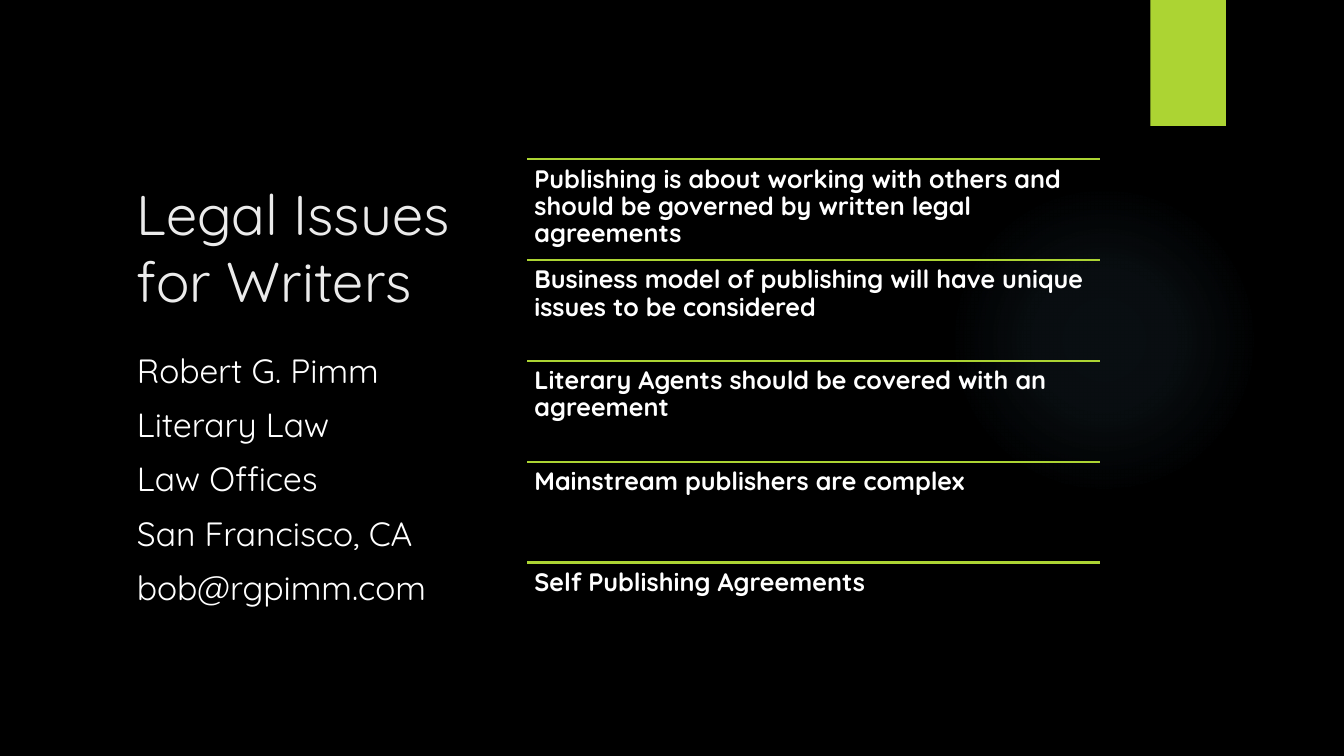
from lxml import etree
from pptx import Presentation
from pptx.dml.color import RGBColor
from pptx.enum.shapes import MSO_CONNECTOR, MSO_SHAPE
from pptx.enum.text import MSO_ANCHOR
from pptx.oxml import parse_xml
from pptx.oxml.ns import nsdecls, qn
from pptx.util import Inches, Pt

TITLE = "Legal Issues for Writers"
CONTACT = ["Robert G. Pimm", "Literary Law", "Law Offices",
           "San Francisco, CA", "bob@rgpimm.com"]
ISSUES = [
    "Publishing is about working with others and should be governed by written legal agreements",
    "Business model of publishing will have unique issues to be considered",
    "Literary Agents should be covered with an agreement",
    "Mainstream publishers are complex",
    "Self Publishing Agreements",
]

FONT = "Quicksand"
BLACK = RGBColor(0x00, 0x00, 0x00)
WHITE = RGBColor(0xFF, 0xFF, 0xFF)
OFF_WHITE = RGBColor(0xEB, 0xEB, 0xEB)
LIME = RGBColor(0xAC, 0xD4, 0x33)
GLOW = RGBColor(0x7A, 0xC4, 0xF0)
GLOW_STOPS = [(0, 7), (36, 6), (69, 0)]  # position %, opacity %

RECT = MSO_SHAPE.RECTANGLE
ELLIPSE = MSO_SHAPE.OVAL
STRAIGHT = MSO_CONNECTOR.STRAIGHT
TOP, BOTTOM = MSO_ANCHOR.TOP, MSO_ANCHOR.BOTTOM

LEFT_X, LEFT_W = 1.26, 3.72
LIST_X, LIST_Y, LIST_W, ROW_H = 5.23, 1.58, 5.68, 1


def add_plain_shape(slide, kind, x, y, w, h):
    s = slide.shapes.add_shape(kind, Inches(x), Inches(y), Inches(w), Inches(h))
    s.shadow.inherit = False
    s.line.fill.background()
    return s


def add_glow(slide):
    """Add the faint radial light behind the list."""
    s = add_plain_shape(slide, ELLIPSE, 9.41, 1.83, 3.08, 3.08)
    stops = "".join(
        f'<a:gs pos="{pos * 1000}"><a:srgbClr val="{GLOW}">'
        f'<a:alpha val="{alpha * 1000}"/></a:srgbClr></a:gs>'
        for pos, alpha in GLOW_STOPS)
    grad = parse_xml(
        f'<a:gradFill {nsdecls("a")} rotWithShape="1"><a:gsLst>{stops}</a:gsLst>'
        '<a:path path="circle"><a:fillToRect l="50000" t="50000" r="50000" b="50000"/>'
        '</a:path></a:gradFill>')
    s._element.spPr.find(qn("a:prstGeom")).addnext(grad)


def add_text(slide, box, lines, size, color, bold=False, anchor=TOP,
             inset=None, gap=0, spacing=None):
    tf = slide.shapes.add_textbox(*map(Inches, box)).text_frame
    tf.word_wrap = True
    tf.vertical_anchor = anchor
    if inset is not None:
        tf.margin_left = tf.margin_right = Inches(inset)
        tf.margin_top = tf.margin_bottom = Inches(inset)
    for i, line in enumerate(lines):
        p = tf.paragraphs[0] if i == 0 else tf.add_paragraph()
        if i and gap:
            p.space_before = Pt(gap)
        if spacing:
            p.line_spacing = spacing
        r = p.add_run()
        r.text = line
        r.font.name = FONT
        r.font.size = Pt(size)
        r.font.bold = bold
        r.font.color.rgb = color


def add_rule(slide, y):
    c = slide.shapes.add_connector(STRAIGHT, Inches(LIST_X), Inches(y),
                                   Inches(LIST_X + LIST_W), Inches(y))
    c.line.color.rgb = LIME
    c.line.width = Pt(1.5)
    etree.SubElement(c._element.spPr, qn("a:effectLst"))


def main():
    prs = Presentation()
    prs.slide_width, prs.slide_height = Inches(13.33), Inches(7.5)
    slide = prs.slides.add_slide(prs.slide_layouts[6])
    slide.background.fill.solid()
    slide.background.fill.fore_color.rgb = BLACK

    add_glow(slide)
    tab = add_plain_shape(slide, RECT, 11.41, 0, 0.75, 1.25)
    tab.fill.solid()
    tab.fill.fore_color.rgb = LIME

    add_text(slide, (LEFT_X, 1.58, LEFT_W, 1.58), [TITLE], 40, OFF_WHITE, anchor=BOTTOM)
    for i, issue in enumerate(ISSUES):
        y = LIST_Y + i * ROW_H
        add_rule(slide, y)
        add_text(slide, (LIST_X, y, LIST_W, ROW_H), [issue], 18, WHITE,
                 bold=True, inset=0.07, spacing=0.9)
    add_text(slide, (LEFT_X, 3.42, LEFT_W, 3.17), CONTACT, 24, WHITE, gap=10)

    prs.save("out.pptx")


if __name__ == "__main__":
    main()
